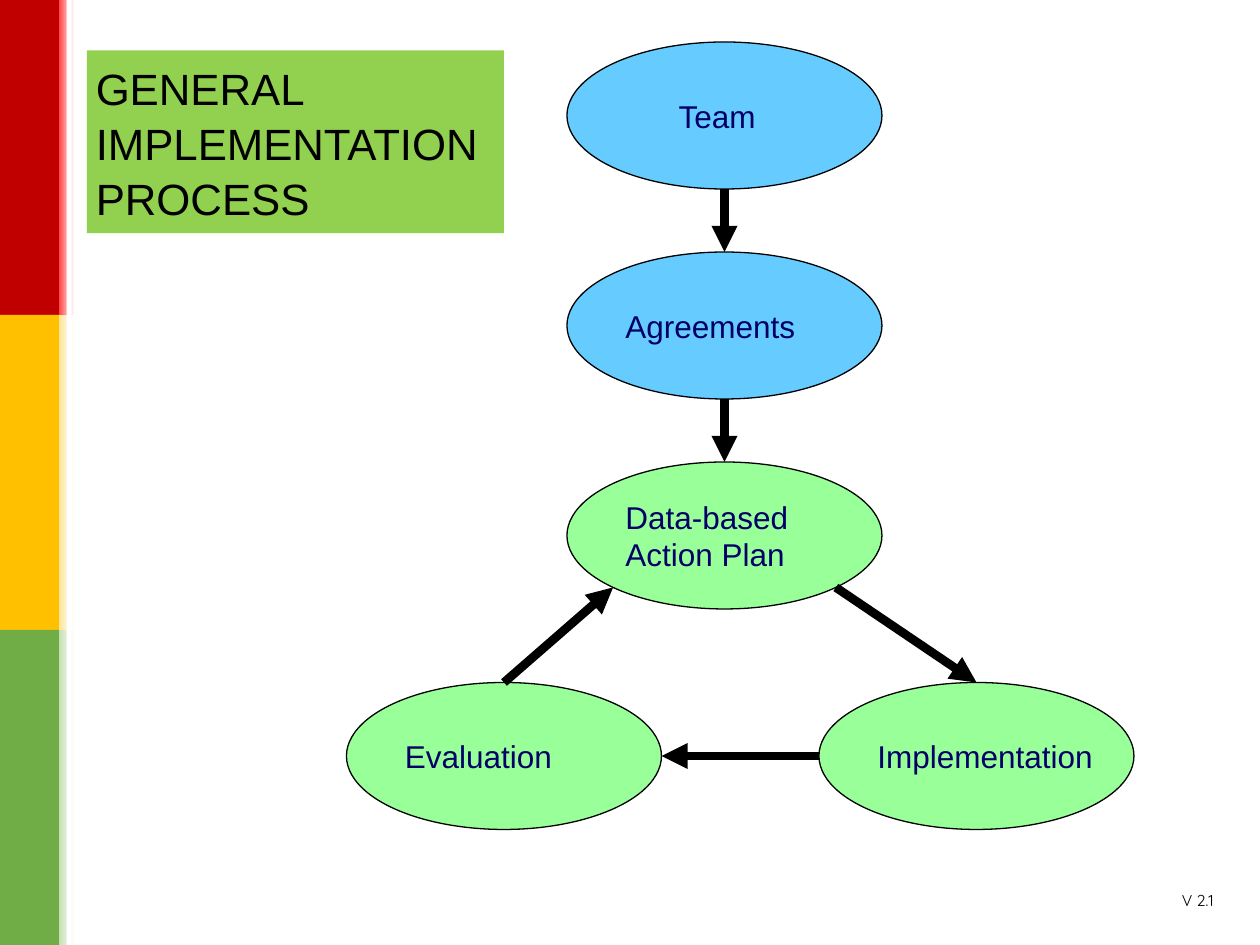
from math import sqrt
from lxml import etree
from pptx import Presentation
from pptx.dml.color import RGBColor
from pptx.enum.dml import MSO_FILL
from pptx.enum.shapes import MSO_CONNECTOR, MSO_SHAPE
from pptx.enum.text import MSO_ANCHOR, PP_ALIGN
from pptx.oxml.ns import qn
from pptx.util import Inches, Pt

RECTANGLE, OVAL = MSO_SHAPE.RECTANGLE, MSO_SHAPE.OVAL
STRAIGHT, MIDDLE, LEFT = MSO_CONNECTOR.STRAIGHT, MSO_ANCHOR.MIDDLE, PP_ALIGN.LEFT
GRADIENT = MSO_FILL.GRADIENT

COLORS = {
    "red": "C00000", "yellow": "FFC000", "green": "70AD47",
    "pale red": "FF4747", "pale yellow": "FEE599", "pale green": "C4E0B2",
    "title": "92D050", "start": "66CCFF", "cycle": "99FF99",
    "white": "FFFFFF", "black": "000000", "navy": "000066",
}

deck = Presentation()
deck.slide_width, deck.slide_height = Inches(10), Inches(7.5)
slide = deck.slides.add_slide(deck.slide_layouts[6])
COLUMN, ROW = deck.slide_width / 40, deck.slide_height / 90


def add_box(kind, left, top, width, height, fill):
    """Add a plain shape, placed in grid columns and rows."""
    box = slide.shapes.add_shape(kind, round(left * COLUMN), round(top * ROW),
                                 round(width * COLUMN), round(height * ROW))
    box.shadow.inherit = False
    box.fill.solid()
    box.fill.fore_color.rgb = RGBColor.from_string(COLORS[fill])
    box.line.fill.background()
    return box


def write(box, lines, size, color, font="Arial", spacing=1.0, **frame_format):
    """Write left-aligned lines, one paragraph each."""
    frame = box.text_frame
    for name, value in frame_format.items():
        setattr(frame, name, value)
    for index, line in enumerate(lines):
        para = frame.add_paragraph() if index else frame.paragraphs[0]
        para.alignment, para.line_spacing = LEFT, spacing
        span = para.add_run()
        span.text = line
        span.font.name, span.font.size = font, Pt(size)
        span.font.color.rgb = RGBColor.from_string(COLORS[color])


# Side band: three colours, each with a fading edge
for index, name in enumerate(["red", "yellow", "green"]):
    add_box(RECTANGLE, 0, index * 30, 1.88, 30, name)
    edge = add_box(RECTANGLE, 1.88, index * 30, 0.48, 30, "white")
    edge.fill.gradient()
    assert edge.fill.type == GRADIENT
    edge.fill.gradient_angle = 0
    for stop, color, position in zip(edge.fill.gradient_stops,
                                     ["pale " + name, "white"], [0, 1]):
        stop.color.rgb = RGBColor.from_string(COLORS[color])
        stop.position = position
add_box(RECTANGLE, 2.12, 0, 0.16, 90, "white")

# Version label
version = slide.shapes.add_textbox(round(37.24 * COLUMN), round(84.36 * ROW),
                                   round(2.76 * COLUMN), round(3.6 * ROW))
write(version, ["V 2.1"], 9, "black", font="Quicksand", word_wrap=True,
      margin_left=Inches(0.07), margin_right=Inches(0.07),
      margin_top=Inches(0.04), margin_bottom=Inches(0.04))

# Process steps: lines, left column, top row, fill, text inset
STEP_WIDTH, STEP_HEIGHT = 10, 14
steps = [
    (["Team"], 18, 4, "start", 0.52),
    (["Agreements"], 18, 24, "start", 0.1),
    (["Data-based", "Action Plan"], 18, 44, "cycle", 0.1),
    (["Implementation"], 26, 65, "cycle", 0.1),
    (["Evaluation"], 11, 65, "cycle", 0.1),
]
centers = []
for lines, left, top, fill, inset in steps:
    step = add_box(OVAL, left, top, STEP_WIDTH, STEP_HEIGHT, fill)
    step.line.color.rgb = RGBColor.from_string(COLORS["black"])
    step.line.width = Pt(0.75)
    write(step, lines, 18, "navy", word_wrap=False, vertical_anchor=MIDDLE,
          margin_left=Inches(inset))
    centers.append((left + STEP_WIDTH / 2, top + STEP_HEIGHT / 2))

# Arrows between points on the ovals, given as directions from the centre
DIAGONAL = 1 / sqrt(2)
TOP, BOTTOM, LEFT_SIDE, RIGHT_SIDE = (0, -1), (0, 1), (-1, 0), (1, 0)
LOWER_LEFT, LOWER_RIGHT = (-DIAGONAL, DIAGONAL), (DIAGONAL, DIAGONAL)
team, agreements, plan, implementation, evaluation = centers
arrows = [
    (team, BOTTOM, agreements, TOP),
    (agreements, BOTTOM, plan, TOP),
    (plan, LOWER_RIGHT, implementation, TOP),
    (implementation, LEFT_SIDE, evaluation, RIGHT_SIDE),
    (evaluation, TOP, plan, LOWER_LEFT),
]
for start, start_side, end, end_side in arrows:
    ends = []
    for (x, y), (across, down) in [(start, start_side), (end, end_side)]:
        ends += [round((x + across * STEP_WIDTH / 2) * COLUMN),
                 round((y + down * STEP_HEIGHT / 2) * ROW)]
    arrow = slide.shapes.add_connector(STRAIGHT, *ends)
    arrow.line.color.rgb = RGBColor.from_string(COLORS["black"])
    arrow.line.width = Pt(5)
    etree.SubElement(arrow.line._get_or_add_ln(), qn("a:tailEnd"), type="triangle")
    etree.SubElement(arrow._element.spPr, qn("a:effectLst"))

# Title
title = add_box(RECTANGLE, 2.76, 4.8, 13.24, 17.4, "title")
write(title, ["GENERAL IMPLEMENTATION PROCESS"], 25, "black", spacing=1.05,
      word_wrap=True, vertical_anchor=MIDDLE,
      margin_left=Inches(0.07), margin_right=Inches(0.07),
      margin_top=Inches(0.07), margin_bottom=Inches(0.07))

deck.save("out.pptx")
